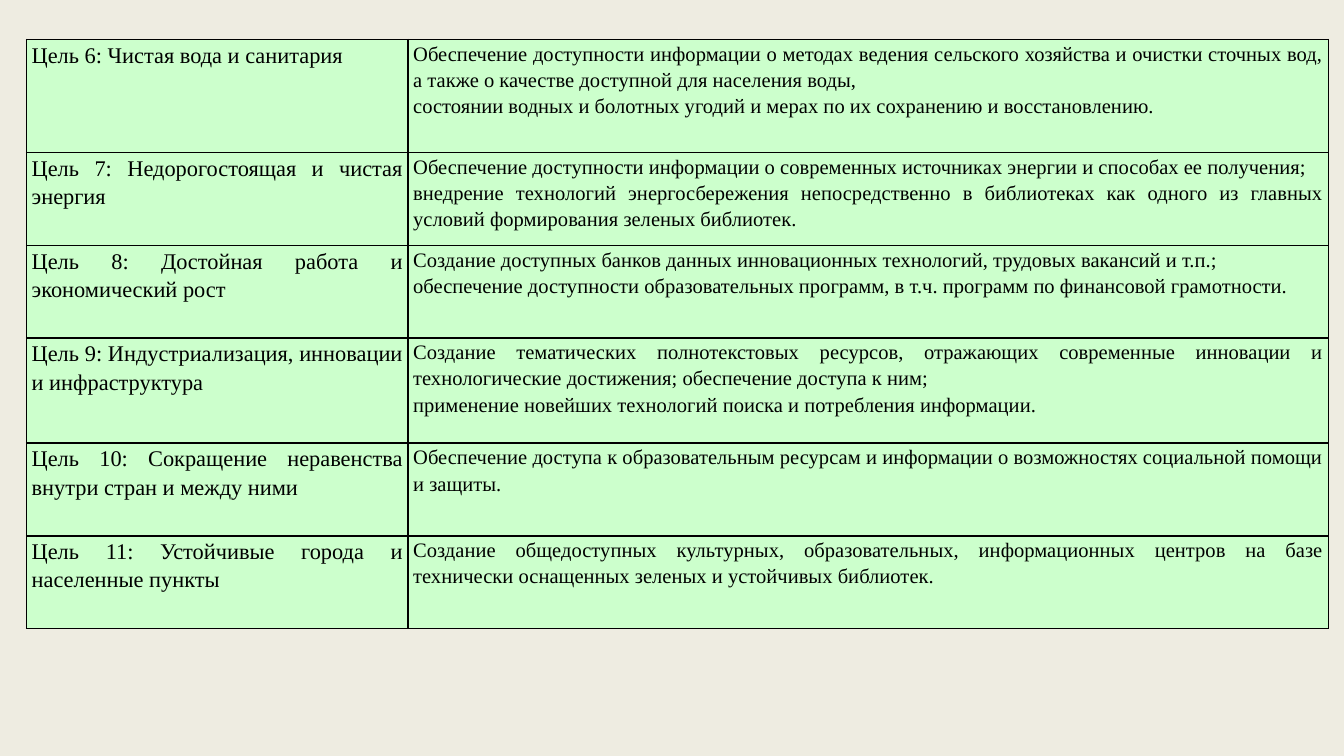
from dataclasses import dataclass

from lxml.etree import SubElement
from pptx import Presentation
from pptx.dml.color import RGBColor
from pptx.enum.text import PP_ALIGN
from pptx.oxml.ns import qn
from pptx.util import Pt


@dataclass(frozen=True)
class Theme:
    background: str = "EEECE1"
    cell: str = "CCFFCC"
    ink: str = "000000"
    font: str = "Times New Roman"
    goal_size: float = 12
    action_size: float = 11
    spacing: float = 1.15
    border: float = 1
    inset: float = 2.7


@dataclass(frozen=True)
class Goal:
    height: float
    title: str
    actions: tuple[str, ...]


THEME = Theme()
LEFT, TOP = 14.3, 21.2
COL_WIDTHS = (204.4, 493)

GOALS = (
    Goal(60.5, "Цель 6: Чистая вода и санитария", (
        "Обеспечение доступности информации о методах ведения сельского хозяйства и очистки "
        "сточных вод, а также о качестве доступной для населения воды,",
        "состоянии водных и болотных угодий и мерах по их сохранению и восстановлению.")),
    Goal(49.8, "Цель 7: Недорогостоящая и чистая энергия", (
        "Обеспечение доступности информации о современных источниках энергии и способах ее "
        "получения;",
        "внедрение технологий энергосбережения непосредственно в библиотеках как одного из "
        "главных условий формирования зеленых библиотек.")),
    Goal(49.6, "Цель 8: Достойная работа и экономический рост", (
        "Создание доступных банков данных инновационных технологий, трудовых вакансий и т.п.;",
        "обеспечение доступности образовательных программ, в т.ч. программ по финансовой "
        "грамотности.")),
    Goal(56.4, "Цель 9: Индустриализация, инновации и инфраструктура", (
        "Создание тематических полнотекстовых ресурсов, отражающих современные инновации и "
        "технологические достижения; обеспечение доступа к ним;",
        "применение новейших технологий поиска и потребления информации.")),
    Goal(49.6, "Цель 10: Сокращение неравенства внутри стран и между ними", (
        "Обеспечение доступа к образовательным ресурсам и информации о возможностях социальной "
        "помощи и защиты.",)),
    Goal(49.8, "Цель 11: Устойчивые города и населенные пункты", (
        "Создание общедоступных культурных, образовательных, информационных центров на базе "
        "технически оснащенных зеленых и устойчивых библиотек.",)),
)


def write_text(tf, paragraphs: tuple[str, ...], *, size: float, color: str = THEME.ink,
               align: PP_ALIGN = PP_ALIGN.JUSTIFY) -> None:
    for i, text in enumerate(paragraphs):
        p = tf.add_paragraph() if i else tf.paragraphs[0]
        p.alignment = align
        p.line_spacing = THEME.spacing
        r = p.add_run()
        r.text = text
        r.font.name = THEME.font
        r.font.size = Pt(size)
        r.font.color.rgb = RGBColor.from_string(color)


def style_cell(cell) -> None:
    cell.margin_left = cell.margin_right = Pt(THEME.inset)
    cell.margin_top = cell.margin_bottom = 0
    # Borders precede the fill in the cell properties
    tc_pr = cell._tc.get_or_add_tcPr()
    for side in ("a:lnL", "a:lnR", "a:lnT", "a:lnB"):
        ln = SubElement(tc_pr, qn(side), w=str(Pt(THEME.border)))
        SubElement(SubElement(ln, qn("a:solidFill")), qn("a:srgbClr"), val=THEME.ink)
    cell.fill.solid()
    cell.fill.fore_color.rgb = RGBColor.from_string(THEME.cell)


def draw_goals(s, goals: tuple[Goal, ...]) -> None:
    frame = s.shapes.add_table(len(goals), len(COL_WIDTHS), Pt(LEFT), Pt(TOP),
                               Pt(sum(COL_WIDTHS)), Pt(sum(g.height for g in goals)))
    table = frame.table
    table.first_row = table.horz_banding = False
    for column, width in zip(table.columns, COL_WIDTHS):
        column.width = Pt(width)
    for row, goal in zip(table.rows, goals):
        row.height = Pt(goal.height)
        title, actions = row.cells
        for cell in (title, actions):
            style_cell(cell)
        write_text(title.text_frame, (goal.title,), size=THEME.goal_size)
        write_text(actions.text_frame, goal.actions, size=THEME.action_size)


def main() -> None:
    prs = Presentation()
    prs.slide_width, prs.slide_height = Pt(720), Pt(405)
    s = prs.slides.add_slide(prs.slide_layouts[6])

    # Background
    s.background.fill.solid()
    s.background.fill.fore_color.rgb = RGBColor.from_string(THEME.background)

    # Table of goals
    draw_goals(s, GOALS)
    prs.save("out.pptx")


if __name__ == "__main__":
    main()
